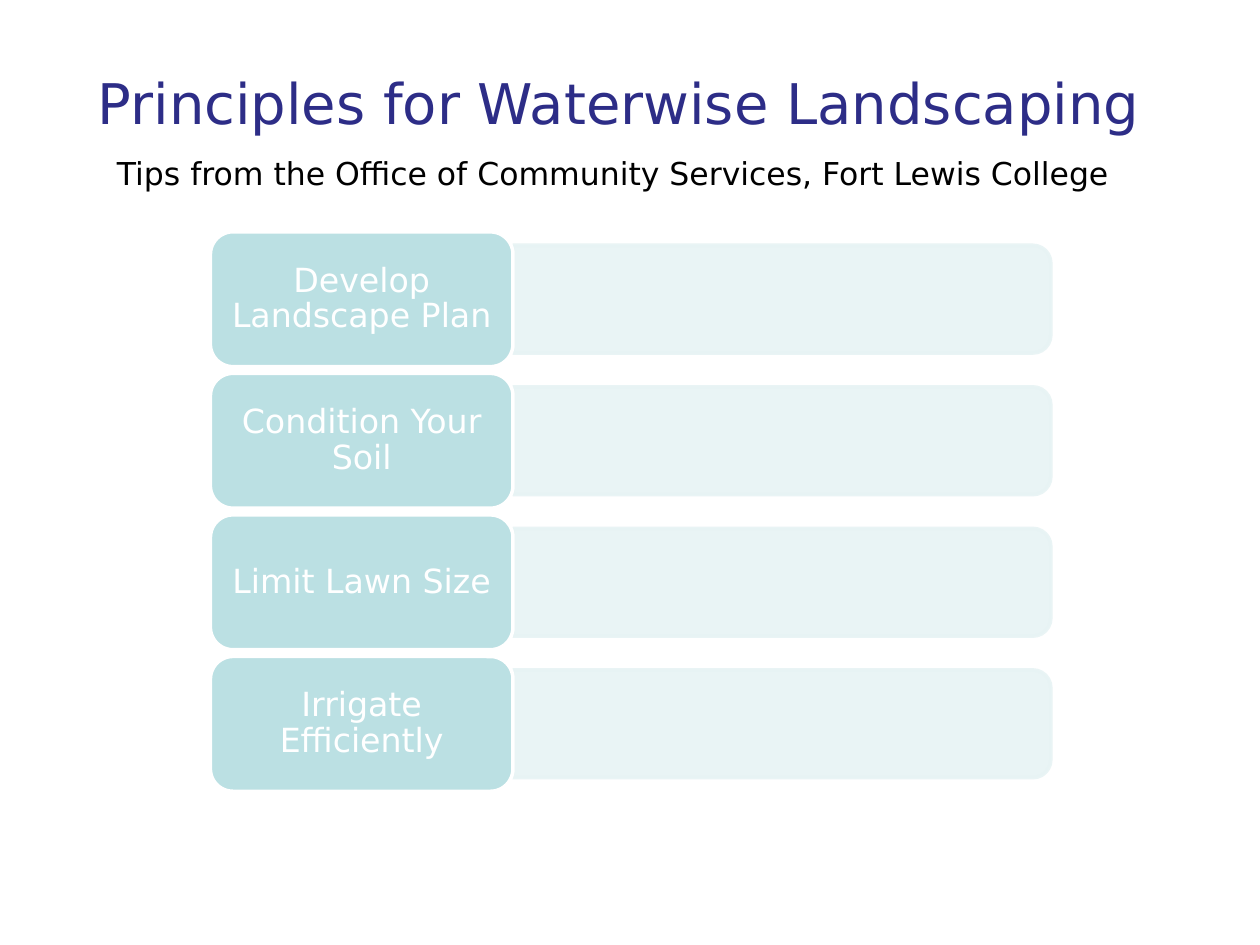
import pptx
import pptx.dml.color
import pptx.enum.shapes
import pptx.enum.text
import pptx.oxml.ns
import pptx.util
from lxml import etree
from pptx.util import Inches

FONT = "DejaVu Sans"
PRINCIPLES = ["Develop Landscape Plan", "Condition Your Soil",
              "Limit Lawn Size", "Irrigate Efficiently"]
GAP_RATIO = 0.05
BAR_RATIO = 0.8
LABEL_RATIO = 0.36


def color(value):
    return pptx.dml.color.RGBColor.from_string(value)


def add_run(paragraph, text, size, value):
    run = paragraph.add_run()
    run.text = text
    run.font.name = FONT
    run.font.size = pptx.util.Pt(size)
    run.font.color.rgb = color(value)


def paint(shape, fill, line):
    shape.shadow.inherit = False
    shape.fill.solid()
    shape.fill.fore_color.rgb = color(fill)
    shape.line.color.rgb = color(line)
    shape.line.width = pptx.util.Pt(2)


def set_opacity(shape, percent):
    """Apply the opacity to both fill and outline."""
    for element in shape._element.spPr.iter(pptx.oxml.ns.qn("a:srgbClr")):
        alpha = etree.SubElement(element, pptx.oxml.ns.qn("a:alpha"))
        alpha.set("val", str(percent * 1000))


def place_title(slide, left, top, width, height):
    title = slide.shapes.title
    title.left, title.top, title.width, title.height = left, top, width, height
    frame = title.text_frame
    frame.vertical_anchor = pptx.enum.text.MSO_ANCHOR.MIDDLE
    paragraph = frame.paragraphs[0]
    paragraph.alignment = pptx.enum.text.PP_ALIGN.CENTER
    add_run(paragraph, "Principles for Waterwise Landscaping", 32, "2D2D87")


def add_subtitle(slide, left, top, width, height):
    frame = slide.shapes.add_textbox(left, top, width, height).text_frame
    frame.word_wrap = True
    add_run(frame.paragraphs[0],
            "Tips from the Office of Community Services, Fort Lewis College",
            18, "000000")


def add_bar(slide, left, top, width, height):
    """Add a bar rounded on its right side, as a quarter-turned shape."""
    bar = slide.shapes.add_shape(
        pptx.enum.shapes.MSO_SHAPE.ROUND_2_SAME_RECTANGLE,
        left + (width - height) // 2, top + (height - width) // 2,
        height, width)
    bar.rotation = 90
    paint(bar, "E7F3F4", "E7F3F4")
    set_opacity(bar, 90)


def add_label(slide, text, left, top, width, height):
    label = slide.shapes.add_shape(
        pptx.enum.shapes.MSO_SHAPE.ROUNDED_RECTANGLE, left, top, width, height)
    paint(label, "BBE0E3", "FFFFFF")
    frame = label.text_frame
    frame.word_wrap = True
    frame.vertical_anchor = pptx.enum.text.MSO_ANCHOR.MIDDLE
    frame.margin_left = frame.margin_right = Inches(0.08)
    frame.margin_top = frame.margin_bottom = Inches(0.04)
    paragraph = frame.paragraphs[0]
    paragraph.alignment = pptx.enum.text.PP_ALIGN.CENTER
    paragraph.line_spacing = 0.9
    add_run(paragraph, text, 19, "FFFFFF")


def add_principles(slide, left, top, width, height):
    count = len(PRINCIPLES)
    row_height = int(height / (count + (count - 1) * GAP_RATIO))
    pitch = int(row_height * (1 + GAP_RATIO))
    bar_height = int(row_height * BAR_RATIO)
    label_width = int(width * LABEL_RATIO)
    for index, text in enumerate(PRINCIPLES):
        row_top = top + index * pitch
        add_bar(slide, left + label_width,
                row_top + (row_height - bar_height) // 2,
                width - label_width, bar_height)
        add_label(slide, text, left, row_top, label_width, row_height)


def main():
    presentation = pptx.Presentation()
    presentation.slide_width = Inches(10)
    presentation.slide_height = Inches(7.5)
    slide = presentation.slides.add_slide(presentation.slide_layouts[5])
    place_title(slide, Inches(0.33), Inches(0.25), Inches(9.17), Inches(1.12))
    add_subtitle(slide, Inches(0.83), Inches(1.17), Inches(8.33), Inches(0.4))
    add_principles(slide, Inches(1.67), Inches(1.84), Inches(6.67), Inches(4.44))
    presentation.save("out.pptx")


if __name__ == "__main__":
    main()
